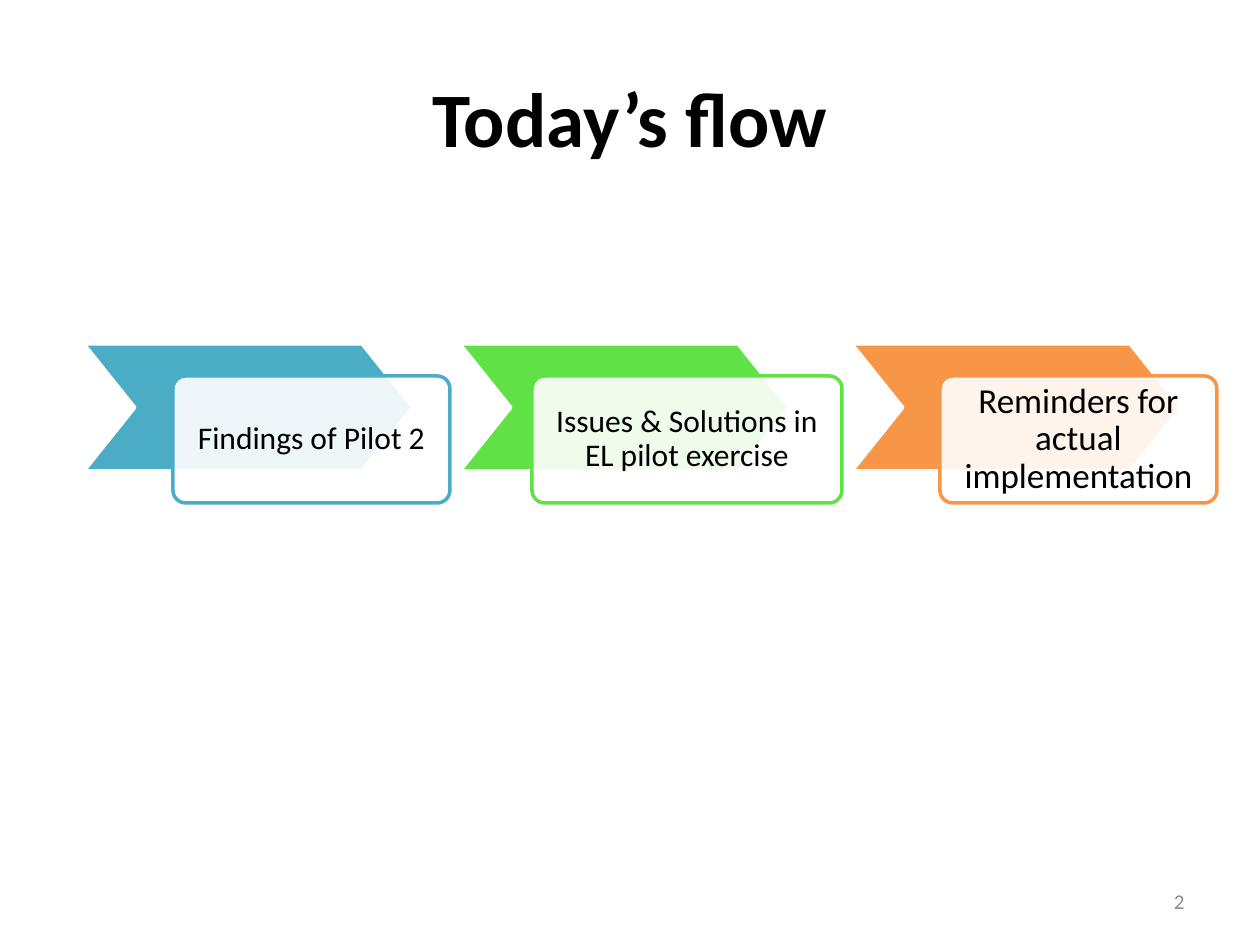
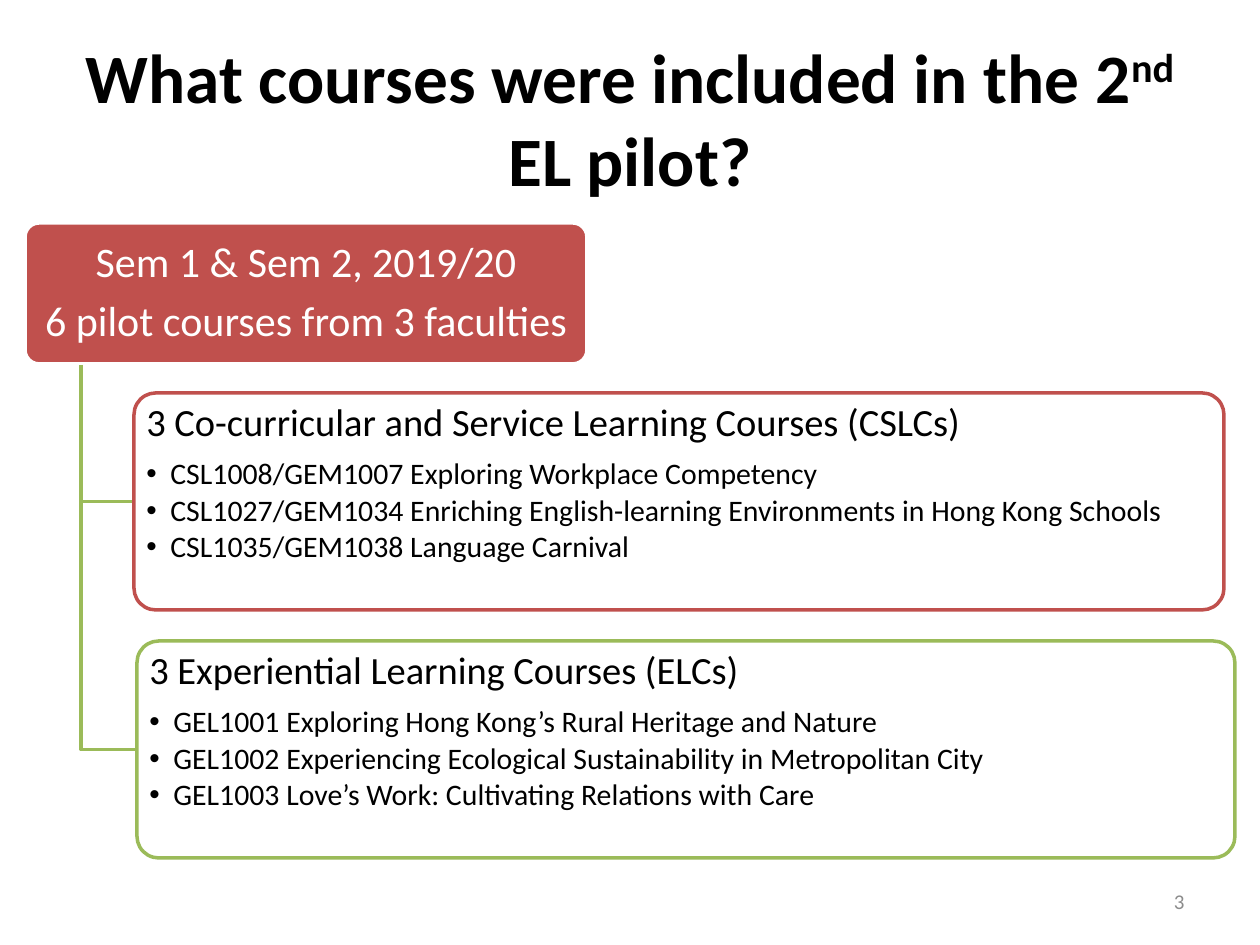
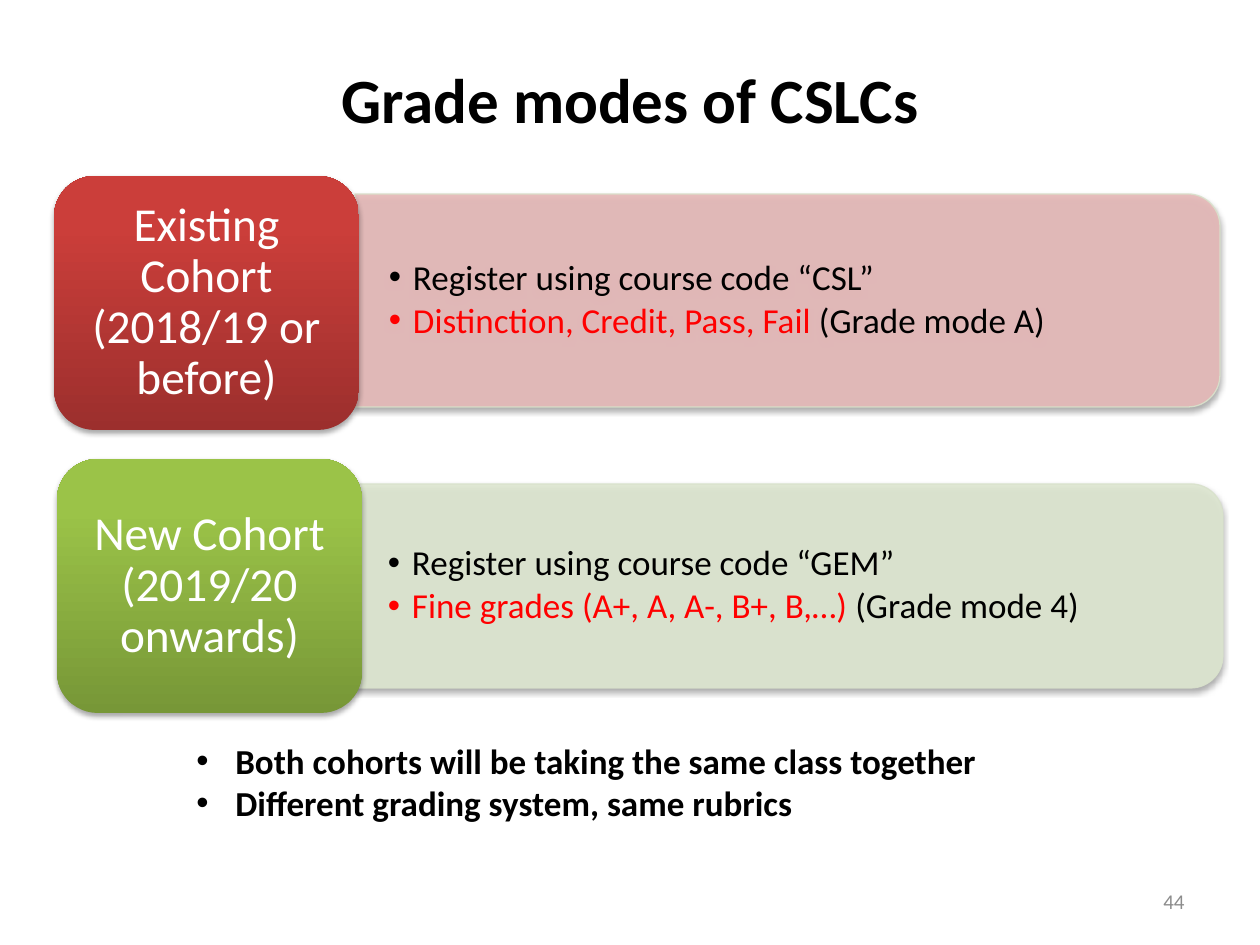
from math import cos, radians, sin

from lxml.etree import SubElement
from pptx import Presentation
from pptx.dml.color import RGBColor
from pptx.enum.shapes import MSO_SHAPE as Shape
from pptx.enum.text import MSO_ANCHOR as Anchor, MSO_AUTO_SIZE as AutoSize, PP_ALIGN as Align
from pptx.oxml.ns import qn
from pptx.util import Emu, Pt

SCALE = 914400 / 126  # EMU in one px
FONT = "Calibri"
COLORS = {
    "black": "000000", "white": "FFFFFF", "grey": "8C8C8C",
    "teal": "4BACC6", "lime": "60E146", "orange": "F79646",
    "brick": "C0504D", "olive": "9BBB59", "alert": "FF0000",
    "pink": "E6B9B8", "sage": "DEE7D1", "edge": "D9E2CC",
    "red_dark": "9C2F2D", "red_light": "CB3E3A",
    "green_dark": "779737", "green_light": "9BC348",
}


def px(length):
    return Emu(round(length * SCALE))


def rgb(name):
    return RGBColor.from_string(COLORS[name])


def set_opacity(owner, percent):
    """Make the solid fill found in a shape's properties or line translucent."""
    color = owner.find(qn("a:solidFill"))[0]
    SubElement(color, qn("a:alpha"), val=str(percent * 1000))


class Deck:
    def __init__(self):
        self.prs = Presentation()
        self.prs.slide_width, self.prs.slide_height = px(1260), px(945)
        self.slide = None

    # Slide frame: title and page number
    def new_slide(self, title, number, size, box=(63, 38, 1134, 158)):
        self.slide = self.prs.slides.add_slide(self.prs.slide_layouts[5])
        heading = self.slide.shapes.title
        heading.left, heading.top, heading.width, heading.height = map(px, box)
        frame = self.frame(heading)
        frame.auto_size = AutoSize.NONE
        paragraph = self.paragraph(frame, title, size, bold=True, align=Align.CENTER)
        page = self.text_box(903, 876, 294, 50, Anchor.MIDDLE)
        self.paragraph(page, str(number), 12, "grey", align=Align.RIGHT)
        return paragraph

    # Text
    def frame(self, shape, inset=None, anchor=Anchor.MIDDLE):
        frame = shape.text_frame
        frame.word_wrap = True
        frame.vertical_anchor = anchor
        if inset:
            (frame.margin_left, frame.margin_top,
             frame.margin_right, frame.margin_bottom) = map(px, inset)
        return frame

    def text_box(self, left, top, width, height, anchor):
        box = self.slide.shapes.add_textbox(*map(px, (left, top, width, height)))
        return self.frame(box, anchor=anchor)

    def paragraph(self, frame, runs, size, color="black", bold=False,
                  align=Align.LEFT, spacing=None, gap=0, indent=0):
        """Add a paragraph; runs is a string or a list of (text, color)."""
        paragraph = frame.add_paragraph() if frame.text else frame.paragraphs[0]
        if indent:
            props = paragraph._p.get_or_add_pPr()
            props.set("marL", str(px(indent)))
            props.set("indent", str(-px(indent)))
            SubElement(props, qn("a:buFont"), typeface="Arial")
            SubElement(props, qn("a:buChar"), char="•")
        paragraph.alignment = align
        if spacing:
            paragraph.line_spacing = spacing
        if gap:
            paragraph.space_after = Pt(gap)
        font = paragraph.font
        font.name, font.size, font.bold = FONT, Pt(size), bold
        if isinstance(runs, str):
            font.color.rgb = rgb(color)
            paragraph.add_run().text = runs
        else:
            for text, run_color in runs:
                run = paragraph.add_run()
                run.text = text
                run.font.color.rgb = rgb(run_color)
        return paragraph

    # Shapes
    def style(self, shape, fill=None, line=None, weight=2, opacity=100):
        shape.shadow.inherit = False
        if fill:
            shape.fill.solid()
            shape.fill.fore_color.rgb = rgb(fill)
            if opacity < 100:
                set_opacity(shape._element.spPr, opacity)
        else:
            shape.fill.background()
        if line:
            shape.line.color.rgb = rgb(line)
            shape.line.width = Pt(weight)
        else:
            shape.line.fill.background()
        return shape

    def preset(self, kind, box, adjustment, **style):
        shape = self.slide.shapes.add_shape(kind, *map(px, box))
        shape.adjustments[0] = adjustment
        return self.style(shape, **style)

    def outline(self, points, close, **style):
        start, *rest = [(px(x), px(y)) for x, y in points]
        builder = self.slide.shapes.build_freeform(*start)
        builder.add_line_segments(rest, close=close)
        return self.style(builder.convert_to_shape(), **style)

    def right_rounded(self, box, radius, **style):
        left, top, width, height = box
        right, bottom = left + width, top + height
        points = [(left, top)]
        for center_y, first in ((top + radius, -90), (bottom - radius, 0)):
            points += [(right - radius + radius * cos(radians(angle)),
                        center_y + radius * sin(radians(angle)))
                       for angle in range(first, first + 91, 6)]
        return self.outline(points + [(left, bottom)], True, **style)

    def drop_shadow(self, shape):
        effects = shape._element.spPr.find(qn("a:effectLst"))
        shadow = SubElement(effects, qn("a:outerShdw"), blurRad=str(Pt(3.1)),
                            dist=str(Pt(1.8)), dir="5400000", rotWithShape="0")
        color = SubElement(shadow, qn("a:srgbClr"), val=COLORS["black"])
        SubElement(color, qn("a:alpha"), val="35000")

    def gradient(self, shape, dark, light):
        shape.fill.gradient()
        shape.fill.gradient_angle = 90
        for stop, position, color in zip(shape.fill.gradient_stops, (0, 0.8), (dark, light)):
            stop.position = position
            stop.color.rgb = rgb(color)


def flow_slide(deck):
    deck.new_slide("Today’s flow", 2, 44)
    steps = [  # chevron left, label left, label width
        ("Findings of Pilot 2", "teal", 84, 173, 277, 18),
        ("Issues & Solutions in EL pilot exercise", "lime", 460, 532, 310, 18),
        ("Reminders for actual implementation", "orange", 852, 940, 277, 20),
    ]
    for text, color, arrow_left, label_left, label_width, size in steps:
        deck.preset(Shape.CHEVRON, (arrow_left, 344, 329, 127), 0.4, fill=color, line="white")
        label = deck.preset(Shape.ROUNDED_RECTANGLE, (label_left, 376, label_width, 127), 0.1,
                            fill="white", line=color, opacity=90)
        deck.paragraph(deck.frame(label, (18, 18, 18, 18)), text, size,
                       align=Align.CENTER, spacing=0.9)


def courses_slide(deck):
    title = deck.new_slide("What courses were included in the 2", 3, 39.6)
    ordinal = title.add_run()
    ordinal.text = "nd"
    ordinal._r.get_or_add_rPr().set("baseline", "30000")
    title.add_run().text = " EL pilot?"

    # Root of the tree
    inset = (6, 4, 6, 4)
    root = deck.preset(Shape.ROUNDED_RECTANGLE, (25, 223, 562, 141), 0.1,
                       fill="brick", line="white")
    root_text = deck.frame(root, inset)
    for text, gap in (("Sem 1 & Sem 2, 2019/20", 8), ("6 pilot courses from 3 faculties", 0)):
        deck.paragraph(root_text, text, 24, "white", align=Align.CENTER, spacing=0.9, gap=gap)

    # Course groups, each hung from the trunk
    groups = [
        ("3 Co-curricular and Service Learning Courses (CSLCs)", "brick", (134, 393, 1090, 217), [
            "CSL1008/GEM1007 Exploring Workplace Competency",
            "CSL1027/GEM1034 Enriching English-learning Environments in Hong Kong Schools",
            "CSL1035/GEM1038 Language Carnival"]),
        ("3 Experiential Learning Courses (ELCs)", "olive", (137, 641, 1098, 217), [
            "GEL1001 Exploring Hong Kong’s Rural Heritage and Nature",
            "GEL1002 Experiencing Ecological Sustainability in Metropolitan City",
            "GEL1003 Love’s Work: Cultivating Relations with Care"]),
    ]
    trunk = 81
    for heading, color, box, courses in groups:
        left, top, _, height = box
        middle = top + height / 2
        deck.outline([(trunk, 365), (trunk, middle), (left, middle)], False, line="olive")
        group = deck.preset(Shape.ROUNDED_RECTANGLE, box, 0.1,
                            fill="white", line=color, opacity=90)
        group_text = deck.frame(group, inset, Anchor.TOP)
        deck.paragraph(group_text, heading, 22, spacing=0.9, gap=8)
        for course in courses:
            deck.paragraph(group_text, course, 17, spacing=0.9, gap=2.5, indent=24)


def grades_slide(deck):
    deck.new_slide("Grade modes of CSLCs", 44, 36, (0, 19, 1260, 158))
    cohorts = [
        ("New Cohort (2019/20 onwards)", "green", (57, 459, 305, 254), "sage",
         (354, 484, 869, 204), "GEM", "Fine grades (A+, A, A-, B+, B,…) ", "(Grade mode 4)"),
        ("Existing Cohort (2018/19 or before)", "red", (54, 176, 305, 254), "pink",
         (355, 194, 865, 213), "CSL", "Distinction, Credit, Pass, Fail ", "(Grade mode A)"),
    ]
    for name, hue, name_box, tint, rules_box, code, grades, mode in cohorts:
        # Rules panel
        rules = deck.right_rounded(rules_box, 32, fill=tint, line="edge", weight=0.75, opacity=90)
        set_opacity(rules.line._get_or_add_ln(), 90)
        deck.drop_shadow(rules)
        rules_text = deck.frame(rules, (34, 25, 42, 25))
        deck.paragraph(rules_text, f"Register using course code “{code}”", 20,
                       spacing=0.9, gap=3, indent=24)
        deck.paragraph(rules_text, [(grades, "alert"), (mode, "black")], 20,
                       spacing=0.9, indent=24)
        # Cohort name
        cohort = deck.preset(Shape.ROUNDED_RECTANGLE, name_box, 0.16)
        deck.gradient(cohort, f"{hue}_dark", f"{hue}_light")
        deck.drop_shadow(cohort)
        deck.paragraph(deck.frame(cohort, (12, 5, 12, 5)), name, 27, "white",
                       align=Align.CENTER, spacing=0.9)

    # Remarks
    remarks = deck.text_box(184, 733, 811, 97, Anchor.TOP)
    for remark in ("Both cohorts will be taking the same class together",
                   "Different grading system, same rubrics"):
        deck.paragraph(remarks, remark, 20, bold=True, indent=39)


def main():
    deck = Deck()
    flow_slide(deck)
    courses_slide(deck)
    grades_slide(deck)
    deck.prs.save("out.pptx")


if __name__ == "__main__":
    main()
